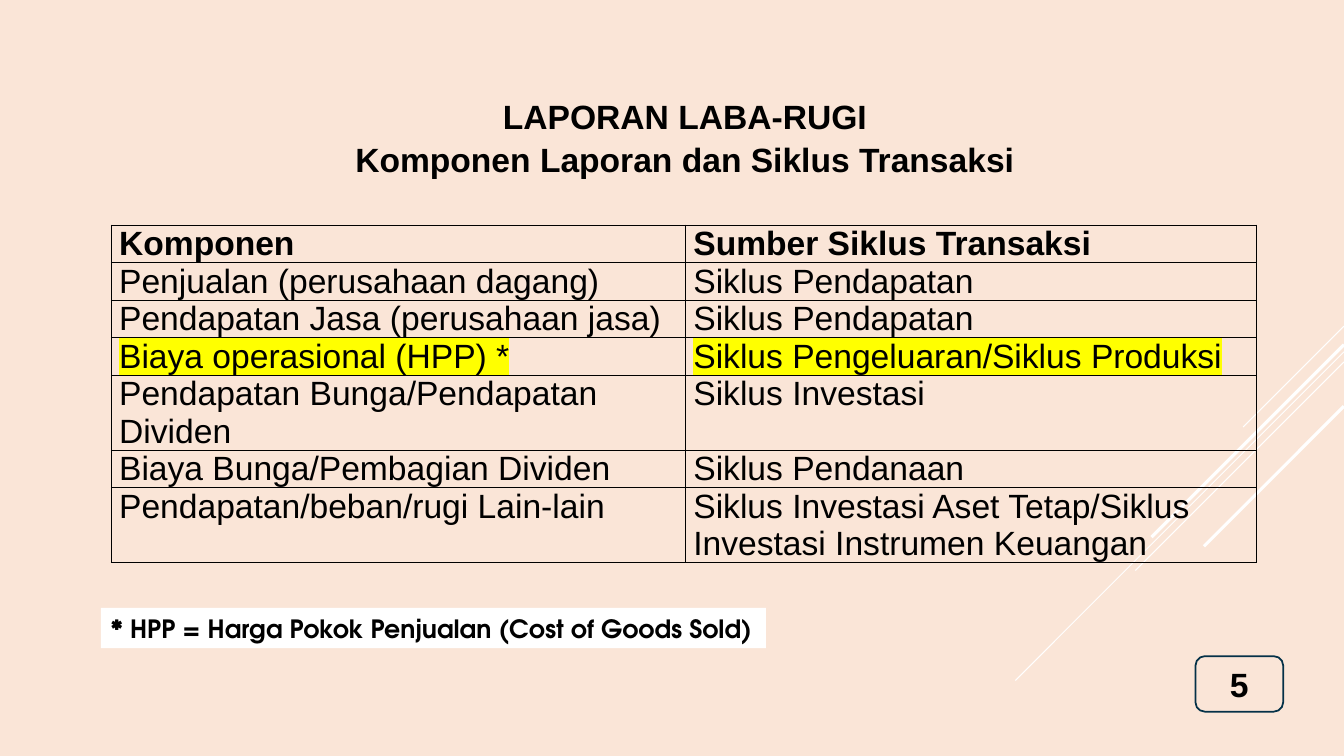
import pptx
import pptx.util
import pptx.dml.color
import pptx.enum.shapes
import pptx.enum.text
import pptx.oxml
import pptx.oxml.ns
from lxml import etree

Pt = pptx.util.Pt
qn = pptx.oxml.ns.qn
SHAPE = pptx.enum.shapes.MSO_SHAPE
ALIGN = pptx.enum.text.PP_ALIGN
ANCHOR = pptx.enum.text.MSO_ANCHOR
COLORS = {"background": "FAE5D7", "text": "000000", "white": "FFFFFF",
          "frame": "043148", "highlight": "FFFF00"}


def rgb(name):
    return pptx.dml.color.RGBColor.from_string(COLORS[name])


def write(p, text, size=24, name="Arial", bold=True):
    r = p.add_run()
    r.text = text
    for key, value in {"size": Pt(size), "name": name, "bold": bold}.items():
        setattr(r.font, key, value)
    r.font.color.rgb = rgb("text")
    return r


prs = pptx.Presentation()
prs.slide_width, prs.slide_height = Pt(960), Pt(540)
s = prs.slides.add_slide(prs.slide_layouts[6])
s.background.fill.solid()
s.background.fill.fore_color.rgb = rgb("background")

# Diagonal lines at 45 degrees from the right edge: top, run, width
for top, run, width in [(233, 72, 0.75), (251.3, 234.7, 0.75), (258.5, 149, 0.75),
                        (246.2, 137.5, 2.25), (290.2, 100, 2.25)]:
    line = s.shapes.add_connector(pptx.enum.shapes.MSO_CONNECTOR.STRAIGHT,
                                  Pt(960), Pt(top), Pt(960 - run), Pt(top + run))
    line.line.color.rgb = rgb("white")
    line.line.width = Pt(width)
    etree.SubElement(line._element.spPr, qn("a:effectLst"))

# Page number
sp = s.shapes.add_shape(SHAPE.ROUNDED_RECTANGLE, Pt(854), Pt(468.7), Pt(62.6), Pt(39.6))
sp.shadow.inherit = False
sp.fill.solid()
sp.fill.fore_color.rgb = rgb("background")
sp.line.color.rgb = rgb("frame")
sp.line.width = Pt(1.25)
tf = sp.text_frame
tf.vertical_anchor = ANCHOR.MIDDLE
tf.paragraphs[0].alignment = ALIGN.CENTER
write(tf.paragraphs[0], "5")

# Table of components and their cycles
rows = [
    ("Komponen", "Sumber Siklus Transaksi"),
    ("Penjualan (perusahaan dagang)", "Siklus Pendapatan"),
    ("Pendapatan Jasa (perusahaan jasa)", "Siklus Pendapatan"),
    ("Biaya operasional (HPP) *", "Siklus Pengeluaran/Siklus Produksi"),
    ("Pendapatan Bunga/Pendapatan Dividen", "Siklus Investasi"),
    ("Biaya Bunga/Pembagian Dividen", "Siklus Pendanaan"),
    ("Pendapatan/beban/rugi Lain-lain",
     "Siklus Investasi Aset Tetap/Siklus Investasi Instrumen Keuangan"),
]
HEADER_ROW, HPP_ROW, TWO_LINE_ROWS, LINE_HEIGHT = 0, 3, (4, 6), 26.8
CELL_FORMAT = {"margin_left": Pt(5.4), "margin_right": Pt(5.4),
               "margin_top": 0, "margin_bottom": 0}
table = s.shapes.add_table(len(rows), 2, Pt(79.7), Pt(160.8), Pt(818), Pt(241.2)).table
table.first_row = table.horz_banding = False
table.columns[0].width, table.columns[1].width = Pt(410.2), Pt(407.8)
for i, texts in enumerate(rows):
    table.rows[i].height = Pt(LINE_HEIGHT * (2 if i in TWO_LINE_ROWS else 1))
    for j, text in enumerate(texts):
        cell = table.cell(i, j)
        for key, value in CELL_FORMAT.items():
            setattr(cell, key, value)
        cell.fill.background()
        tcPr = cell._tc.get_or_add_tcPr()
        for k, side in enumerate(("lnL", "lnR", "lnT", "lnB")):
            border = etree.Element(qn("a:" + side), w=str(Pt(1)))
            fill = etree.SubElement(border, qn("a:solidFill"))
            etree.SubElement(fill, qn("a:srgbClr"), val=COLORS["text"])
            tcPr.insert(k, border)
        r = write(cell.text_frame.paragraphs[0], text, bold=i == HEADER_ROW)
        if i == HPP_ROW:
            mark = etree.Element(qn("a:highlight"))
            etree.SubElement(mark, qn("a:srgbClr"), val=COLORS["highlight"])
            r._r.rPr.find(qn("a:solidFill")).addnext(mark)

# Title
tf = s.shapes.add_textbox(Pt(188.6), Pt(62.6), Pt(601.2), Pt(65.5)).text_frame
tf.word_wrap = True
tf.text = "\n"
for p, text in zip(tf.paragraphs, ("LAPORAN LABA-RUGI",
                                   "Komponen Laporan dan Siklus Transaksi")):
    p.alignment = ALIGN.CENTER
    p.line_spacing = 1.08
    write(p, text)

# Footnote
sp = s.shapes.add_shape(SHAPE.RECTANGLE, Pt(72), Pt(434.2), Pt(475.2), Pt(28.8))
sp.shadow.inherit = False
sp.fill.solid()
sp.fill.fore_color.rgb = rgb("white")
sp.line.fill.background()
tf = sp.text_frame
tf.word_wrap = False
tf.vertical_anchor = ANCHOR.TOP
tf.paragraphs[0].alignment = ALIGN.LEFT
write(tf.paragraphs[0], "* HPP = Harga Pokok Penjualan (Cost of Goods Sold)",
      size=18, name="TeX Gyre Adventor")

prs.save("out.pptx")
